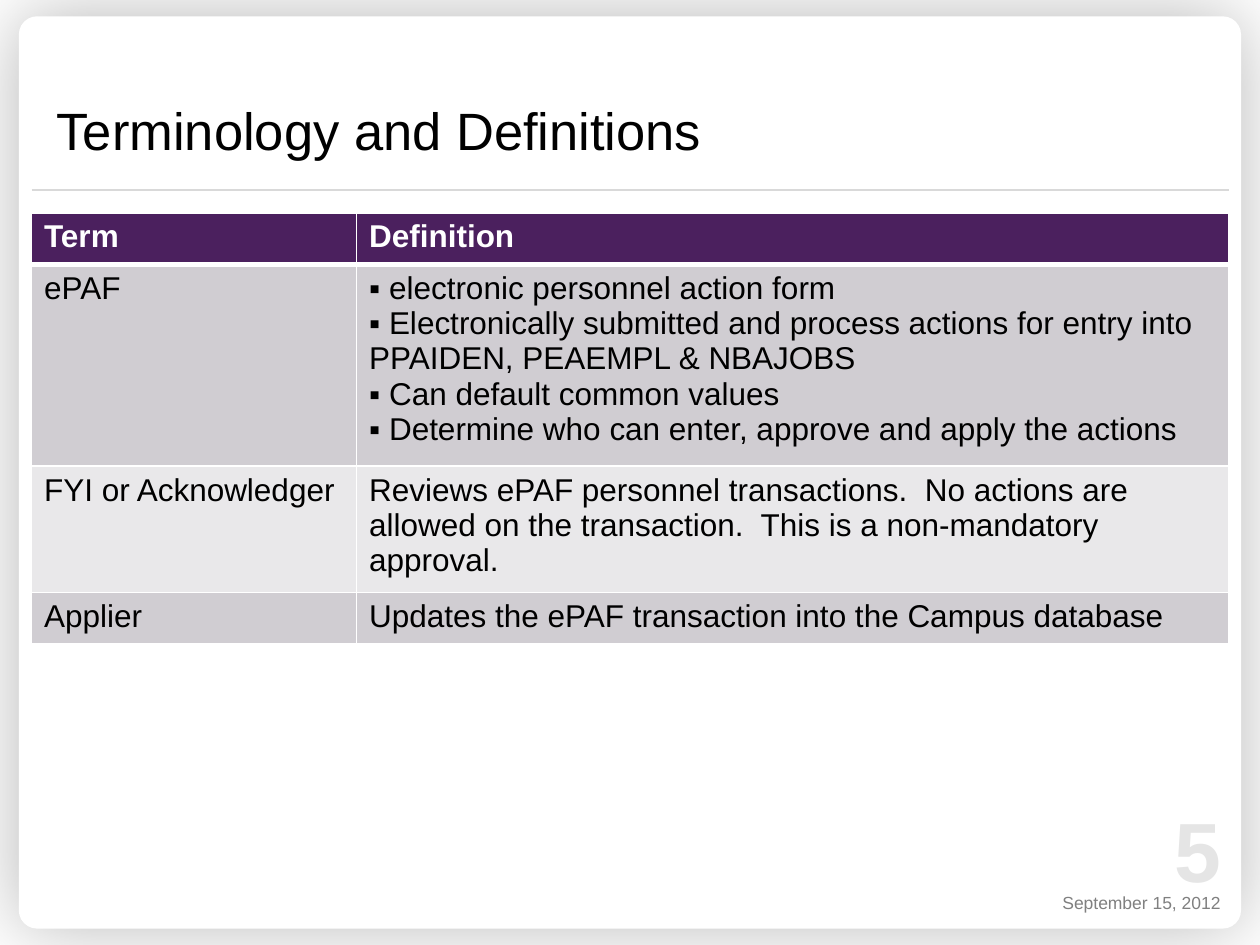
from lxml.etree import SubElement
from pptx import Presentation
from pptx.dml.color import RGBColor
from pptx.enum.shapes import MSO_CONNECTOR, MSO_SHAPE
from pptx.enum.text import MSO_ANCHOR, PP_ALIGN
from pptx.oxml import parse_xml
from pptx.oxml.ns import nsdecls, qn
from pptx.util import Pt

TITLE = "Terminology and Definitions"
SLIDE_NUMBER = "5"
DATE = "September 15, 2012"
HEADER = ("Term", "Definition")
# A definition given as a list is bulleted.
TERMS = [
    ("ePAF", [
        "electronic personnel action form",
        "Electronically submitted and process actions for entry into PPAIDEN, PEAEMPL & NBAJOBS",
        "Can default common values",
        "Determine who can enter, approve and apply the actions",
    ]),
    ("FYI or Acknowledger",
     "Reviews ePAF personnel transactions.  No actions are allowed on the transaction.  "
     "This is a non-mandatory approval."),
    ("Applier", "Updates the ePAF transaction into the Campus database"),
]
COLUMN_WIDTHS = (185.76, 498.24)
ROW_HEIGHTS = (29.5, 108, 67.5, 29.5)
LEFT, WIDTH = 18, 684
BLACK, WHITE, PURPLE = "000000", "FFFFFF", "4B205E"
BANDS = ("D0CDD2", "E9E8EA")


def color(value):
    return RGBColor.from_string(value)


def write_text(frame, text, size=18, font_color=BLACK, bold=False, align=PP_ALIGN.LEFT):
    """Fill a text frame; a list of texts becomes bulleted paragraphs."""
    bulleted = isinstance(text, list)
    for index, line in enumerate(text if bulleted else [text]):
        paragraph = frame.add_paragraph() if index else frame.paragraphs[0]
        paragraph.alignment = align
        if bulleted:
            properties = paragraph._p.get_or_add_pPr()
            properties.set("marL", "0")
            properties.set("indent", "0")
            SubElement(properties, qn("a:buFont"), typeface="Arial")
            SubElement(properties, qn("a:buChar"), char="▪")
        run = paragraph.add_run()
        run.text = f" {line}" if bulleted else line
        run.font.name = "Arial"
        run.font.size = Pt(size)
        run.font.bold = bold
        run.font.color.rgb = color(font_color)


def add_text(slide, text, left, top, width, height, side=7.2, end=0, **text_format):
    frame = slide.shapes.add_textbox(Pt(left), Pt(top), Pt(width), Pt(height)).text_frame
    frame.word_wrap = True
    frame.vertical_anchor = MSO_ANCHOR.BOTTOM
    frame.margin_left = frame.margin_right = Pt(side)
    frame.margin_top = frame.margin_bottom = Pt(end)
    write_text(frame, text, **text_format)


def add_panel(slide):
    """White rounded panel with a soft shadow around it."""
    panel = slide.shapes.add_shape(
        MSO_SHAPE.ROUNDED_RECTANGLE, Pt(10.8), Pt(9.36), Pt(698.4), Pt(521.28))
    panel.adjustments[0] = 0.02
    panel.fill.solid()
    panel.fill.fore_color.rgb = color(WHITE)
    panel.line.fill.background()
    panel._element.spPr.append(parse_xml(
        f'<a:effectLst {nsdecls("a")}><a:outerShdw blurRad="{Pt(46.8)}" dist="0" dir="0" '
        'algn="ctr" rotWithShape="0"><a:srgbClr val="000000"><a:alpha val="27000"/>'
        '</a:srgbClr></a:outerShdw></a:effectLst>'))


def add_rule(slide):
    rule = slide.shapes.add_connector(
        MSO_CONNECTOR.STRAIGHT, Pt(LEFT), Pt(108.72), Pt(LEFT + WIDTH), Pt(108.72))
    rule.line.color.rgb = color("D9D9D9")
    rule.line.width = Pt(1)
    SubElement(rule._element.spPr, qn("a:effectLst"))


def set_borders(cell, **widths):
    properties = cell._tc.get_or_add_tcPr()
    for side, width in widths.items():
        properties.append(parse_xml(
            f'<a:ln{side} {nsdecls("a")} w="{Pt(width)}"><a:solidFill>'
            f'<a:srgbClr val="{WHITE}"/></a:solidFill></a:ln{side}>'))


def add_terms_table(slide):
    rows = [HEADER, *TERMS]
    table = slide.shapes.add_table(
        len(rows), len(HEADER), Pt(LEFT), Pt(121.68), Pt(WIDTH), Pt(sum(ROW_HEIGHTS))).table
    for column, width in zip(table.columns, COLUMN_WIDTHS):
        column.width = Pt(width)
    for row_index, (row, height) in enumerate(zip(rows, ROW_HEIGHTS)):
        table.rows[row_index].height = Pt(height)
        is_header = row_index == 0
        for column_index, text in enumerate(row):
            cell = table.cell(row_index, column_index)
            set_borders(cell, L=1, R=1, T=3 if row_index == 1 else 1, B=3 if is_header else 1)
            cell.fill.solid()
            cell.fill.fore_color.rgb = color(PURPLE if is_header else BANDS[(row_index - 1) % 2])
            write_text(cell.text_frame, text, bold=is_header,
                       font_color=WHITE if is_header else BLACK)


def main():
    presentation = Presentation()
    presentation.slide_width, presentation.slide_height = Pt(720), Pt(540)
    slide = presentation.slides.add_slide(presentation.slide_layouts[6])
    add_panel(slide)
    add_rule(slide)
    add_text(slide, SLIDE_NUMBER, 576, 432.72, 128.88, 81.36,
             size=48, font_color="E5E5E5", bold=True, align=PP_ALIGN.RIGHT)
    add_text(slide, DATE, 536.4, 488.88, 168, 33.12,
             size=10, font_color="808080", align=PP_ALIGN.RIGHT)
    add_text(slide, TITLE, LEFT, 16.56, WIDTH, 79.2, side=14.4, end=3.6, size=30)
    add_terms_table(slide)
    presentation.save("out.pptx")


if __name__ == "__main__":
    main()
